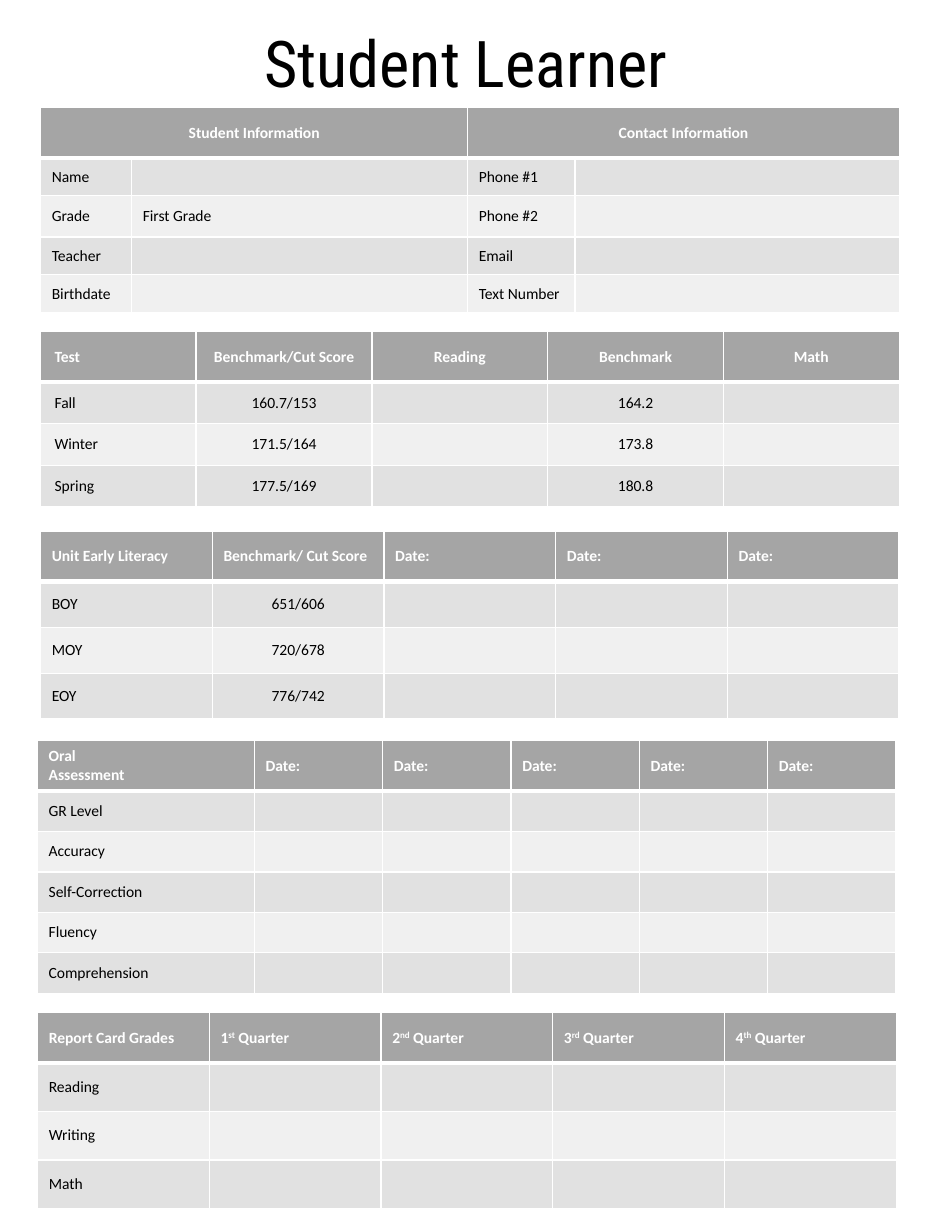
from dataclasses import dataclass

from lxml.etree import SubElement
from pptx import Presentation
from pptx.dml.color import RGBColor
from pptx.enum.text import MSO_ANCHOR, PP_ALIGN
from pptx.oxml import parse_xml
from pptx.oxml.ns import nsdecls, qn
from pptx.slide import Slide
from pptx.table import _Cell
from pptx.text.text import _Paragraph
from pptx.util import Pt

BLACK = RGBColor(0x00, 0x00, 0x00)
WHITE = RGBColor(0xFF, 0xFF, 0xFF)
HEADER_GRAY = RGBColor(0xA5, 0xA5, 0xA5)
DARK_BAND = RGBColor(0xE1, 0xE1, 0xE1)
LIGHT_BAND = RGBColor(0xF0, 0xF0, 0xF0)

TITLE_FONT = "Roboto Condensed"
TABLE_FONT = "Calibri"
TEXT_SIZE = 10
TABLE_WIDTH = 552
HEADER_HEIGHT = 32.4
THIN_RULE = 1
HEADER_RULE = 3


@dataclass(frozen=True)
class FormTable:
    """One table; text between carets is superscript, a line feed starts a paragraph."""
    left: float
    top: float
    columns: list[float]
    row_heights: list[float]
    rows: list[list[str]]
    centered_header: tuple[int, ...] = ()
    centered_body: tuple[int, ...] = ()
    header_span: int = 1
    side_inset: float = 7.2
    end_inset: float = 3.6


def equal_columns(count: int, first: float | None = None) -> list[float]:
    """Share the table width equally, after an optional first column."""
    if first is None:
        return [TABLE_WIDTH / count] * count
    return [first] + [(TABLE_WIDTH - first) / (count - 1)] * (count - 1)


def labels_only(names: list[str], blanks: int) -> list[list[str]]:
    return [[name] + [""] * blanks for name in names]


TABLES = [
    # Student and contact information
    FormTable(
        26.1, 69.1, [58.5, 216, 69, 208.5], [24.4, 26.4, 24.4, 24.4],
        [["Student Information", "", "Contact Information", ""],
         ["Name", "", "Phone #1", ""],
         ["Grade", "First Grade", "Phone #2", ""],
         ["Teacher", "", "Email", ""],
         ["Birthdate", "", "Text Number", ""]],
        centered_header=(0, 2), header_span=2),
    # Seasonal test scores
    FormTable(
        26.1, 213.2, equal_columns(5, first=100), [26.8] * 3,
        [["Test", "Benchmark/Cut Score", "Reading", "Benchmark", "Math"],
         ["Fall", "160.7/153", "", "164.2", ""],
         ["Winter", "171.5/164", "", "173.8", ""],
         ["Spring", "177.5/169", "", "180.8", ""]],
        centered_header=(1, 2, 3, 4), centered_body=(1, 3),
        side_inset=9, end_inset=4.5),
    # Early literacy
    FormTable(
        26.1, 341.4, equal_columns(5), [29.5] * 3,
        [["Unit Early Literacy", "Benchmark/ Cut Score"] + ["Date:"] * 3,
         ["BOY", "651/606", "", "", ""],
         ["MOY", "720/678", "", "", ""],
         ["EOY", "776/742", "", "", ""]],
        centered_body=(1,)),
    # Oral reading assessment
    FormTable(
        24.1, 476.1, equal_columns(6, first=139.5), [26] * 5,
        [["Oral\nAssessment"] + ["Date:"] * 5]
        + labels_only(["GR Level", "Accuracy", "Self-Correction",
                       "Fluency", "Comprehension"], 5)),
    # Report card
    FormTable(
        24.2, 650.9, equal_columns(5), [31.2] * 3,
        [["Report Card Grades"]
         + [f"{number}^{ending}^ Quarter"
            for number, ending in enumerate(["st", "nd", "rd", "th"], 1)]]
        + labels_only(["Reading", "Writing", "Math"], 4)),
]


def add_run(para: _Paragraph, text: str, font: str, size: float,
            color: RGBColor, bold: bool = False, raised: bool = False) -> None:
    span = para.add_run()
    span.text = text
    span.font.name = font
    span.font.size = Pt(size)
    span.font.bold = bold
    span.font.color.rgb = color
    if raised:
        span.font._element.set("baseline", "30000")


def fill_text(cell: _Cell, text: str, align: PP_ALIGN,
              color: RGBColor, bold: bool) -> None:
    frame = cell.text_frame
    for index, line in enumerate(text.split("\n")):
        para = frame.add_paragraph() if index else frame.paragraphs[0]
        para.alignment = align
        if not line:
            # Keep blank cells from stretching their row
            SubElement(para._p, qn("a:endParaRPr"), sz=str(TEXT_SIZE * 100))
            continue
        for part, piece in enumerate(line.split("^")):
            add_run(para, piece, TABLE_FONT, TEXT_SIZE, color, bold,
                    raised=part % 2 == 1)


def set_borders(cell: _Cell, top: float, bottom: float) -> None:
    properties = cell._tc.get_or_add_tcPr()
    widths = {"lnL": THIN_RULE, "lnR": THIN_RULE, "lnT": top, "lnB": bottom}
    for position, (side, width) in enumerate(widths.items()):
        properties.insert(position, parse_xml(
            f'<a:{side} {nsdecls("a")} w="{Pt(width)}"><a:solidFill>'
            f'<a:srgbClr val="{WHITE}"/></a:solidFill></a:{side}>'))


def draw_table(slide: Slide, form: FormTable) -> None:
    heights = [HEADER_HEIGHT] + form.row_heights
    table = slide.shapes.add_table(
        len(form.rows), len(form.columns), Pt(form.left), Pt(form.top),
        Pt(TABLE_WIDTH), Pt(sum(heights))).table
    for column, width in zip(table.columns, form.columns):
        column.width = Pt(width)
    for row, height in zip(table.rows, heights):
        row.height = Pt(height)

    for row_index, texts in enumerate(form.rows):
        is_header = row_index == 0
        centered = form.centered_header if is_header else form.centered_body
        band = DARK_BAND if row_index % 2 else LIGHT_BAND
        for column_index, text in enumerate(texts):
            cell = table.cell(row_index, column_index)
            cell.vertical_anchor = MSO_ANCHOR.MIDDLE
            cell.margin_left = cell.margin_right = Pt(form.side_inset)
            cell.margin_top = cell.margin_bottom = Pt(form.end_inset)
            cell.fill.solid()
            cell.fill.fore_color.rgb = HEADER_GRAY if is_header else band
            set_borders(cell,
                        top=HEADER_RULE if row_index == 1 else THIN_RULE,
                        bottom=HEADER_RULE if is_header else THIN_RULE)
            fill_text(cell, text,
                      PP_ALIGN.CENTER if column_index in centered else PP_ALIGN.LEFT,
                      WHITE if is_header else BLACK, is_header)

    if form.header_span > 1:
        for start in range(0, len(form.columns), form.header_span):
            table.cell(0, start).merge(table.cell(0, start + form.header_span - 1))


def draw_title(slide: Slide) -> None:
    box = slide.shapes.add_textbox(Pt(121.7), Pt(11.5), Pt(355.7), Pt(57.6))
    box.text_frame.word_wrap = True
    para = box.text_frame.paragraphs[0]
    para.alignment = PP_ALIGN.CENTER
    add_run(para, "Student Learner", TITLE_FONT, 41.4, BLACK)


def main() -> None:
    deck = Presentation()
    deck.slide_width, deck.slide_height = Pt(612), Pt(792)
    slide = deck.slides.add_slide(deck.slide_layouts[6])
    draw_title(slide)
    for form in TABLES:
        draw_table(slide, form)
    deck.save("out.pptx")


if __name__ == "__main__":
    main()
